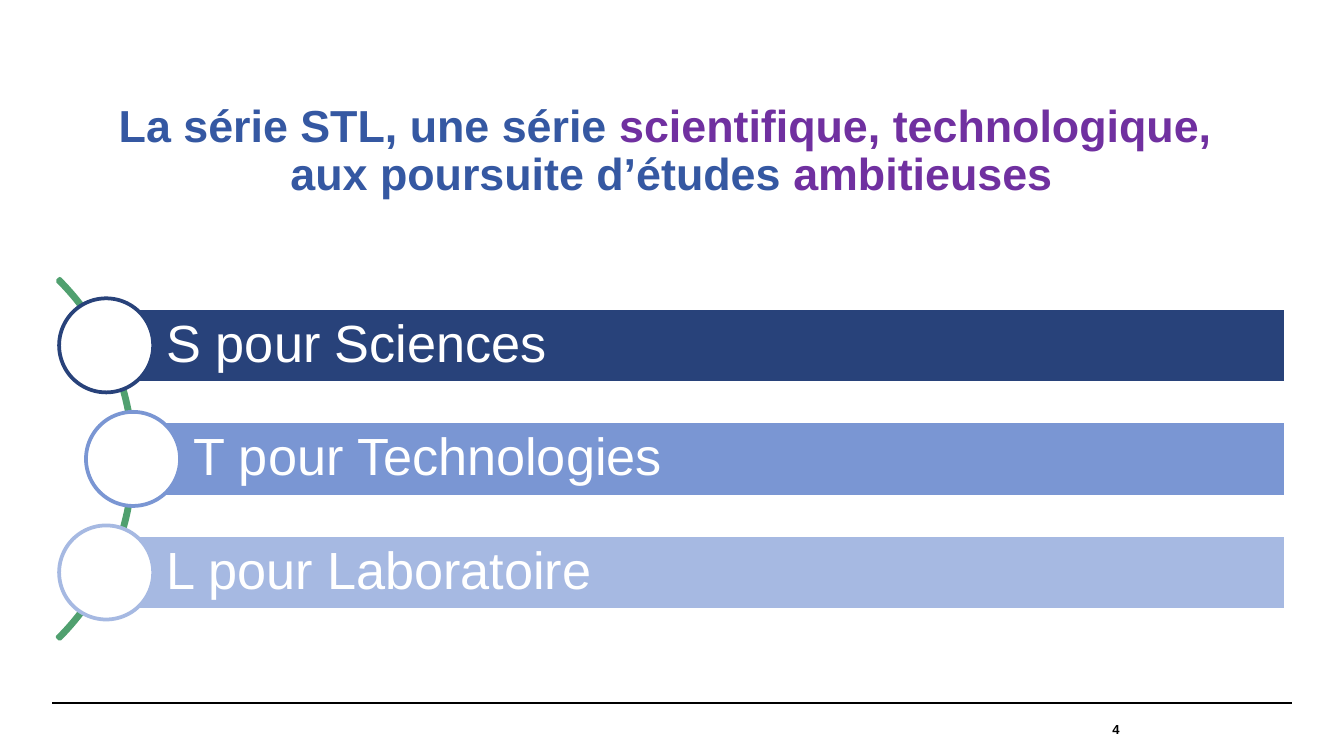
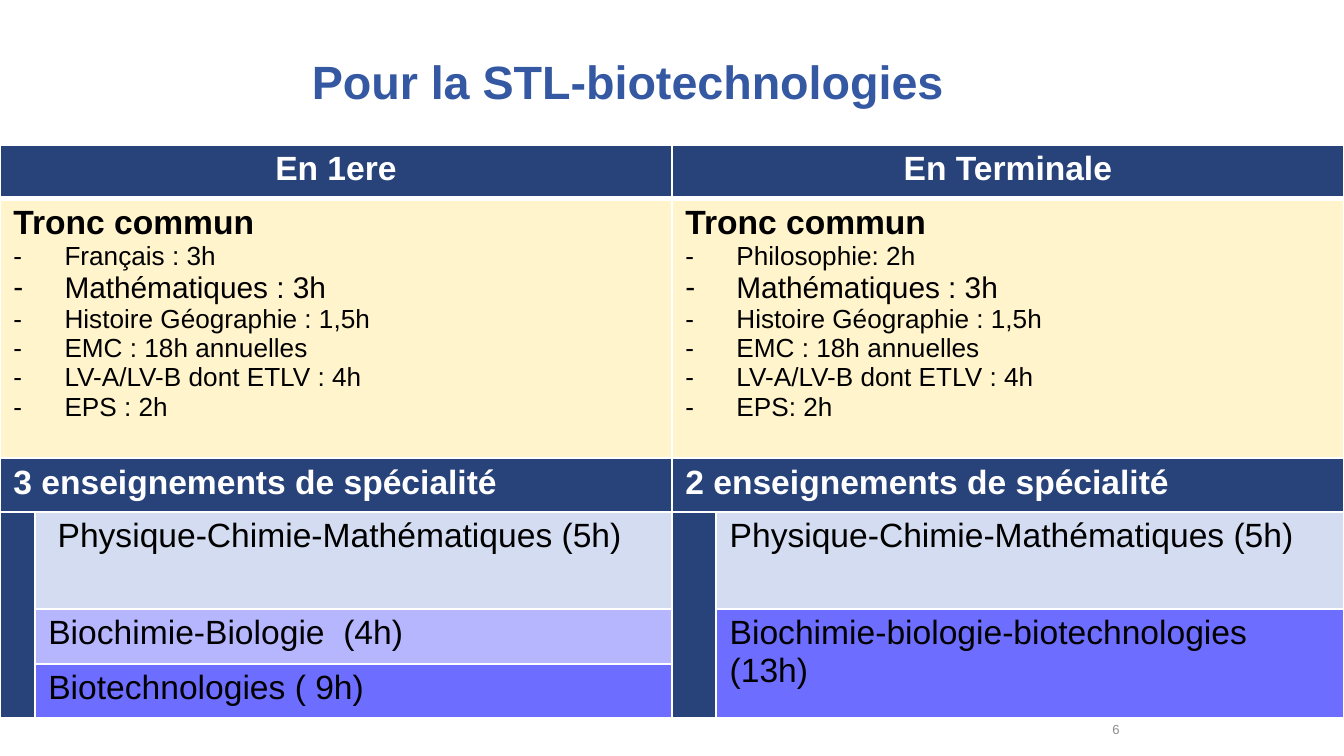
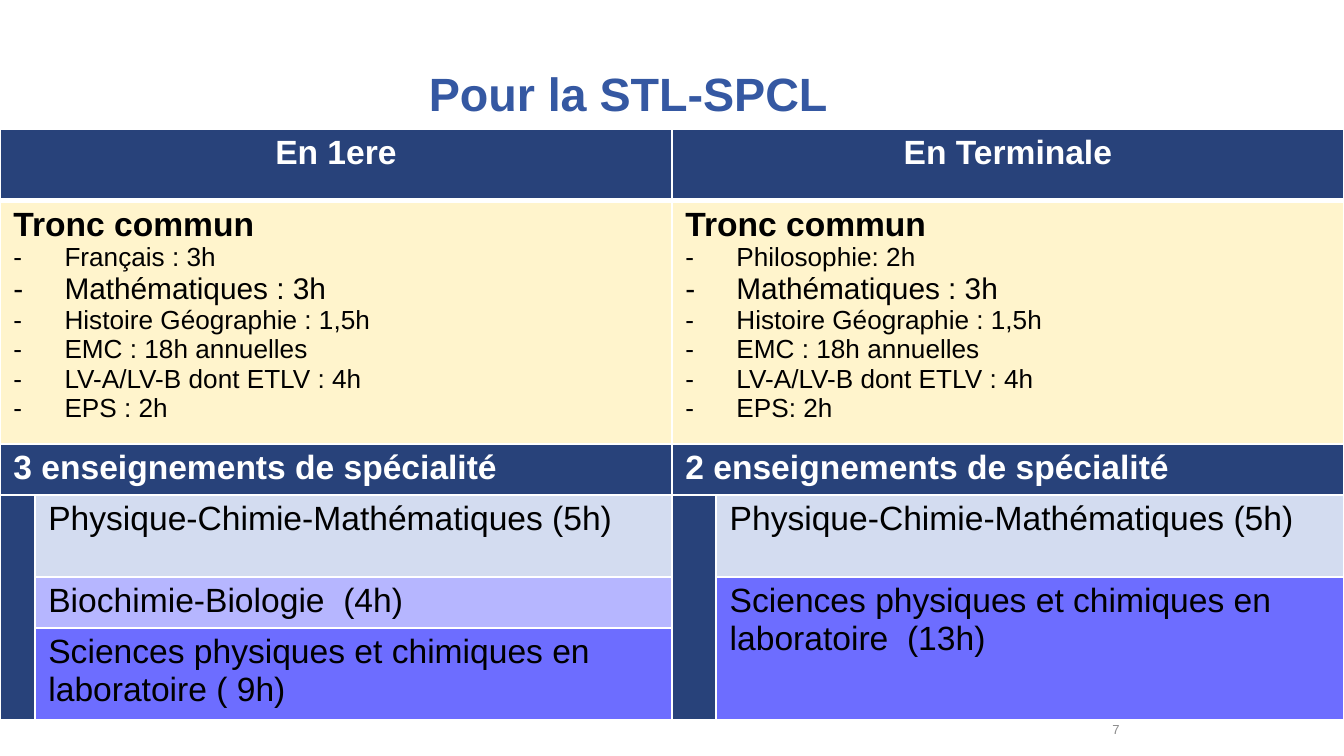
from lxml.etree import SubElement, Element
from pptx import Presentation
from pptx.dml.color import RGBColor
from pptx.enum.shapes import MSO_CONNECTOR as Connector, MSO_SHAPE as Shape
from pptx.enum.text import MSO_ANCHOR as Anchor, PP_ALIGN as Align
from pptx.oxml.ns import qn
from pptx.util import Inches, Pt

FONT = "Arial"
NAVY, BLUE, PURPLE, GREEN = "28427A", "3558A2", "7030A0", "50A06F"
WHITE, BLACK, GREY, CREAM = "FFFFFF", "000000", "8C8C8C", "FFF4CC"
PALE, LILAC, VIOLET = "D3DCF0", "B6B6FF", "6D6DFF"

SERIES_TITLE = [
    [("La série STL, une série ", BLUE), ("scientifique, technologique, ", PURPLE)],
    [("aux poursuite d’études ", BLUE), ("ambitieuses", PURPLE)],
]
LETTERS = [
    ("S pour Sciences", NAVY, 0),
    ("T pour Technologies", "7A96D3", 0.2),
    ("L pour Laboratoire", "A6B9E2", 0),
]

YEARS = ["En 1ere", "En Terminale"]
CORE_TITLE = "Tronc commun"
SHARED_CORE = [
    ("Mathématiques : 3h", 16),
    ("Histoire Géographie : 1,5h", 14),
    ("EMC : 18h annuelles", 14),
    ("LV-A/LV-B dont ETLV : 4h", 14),
]
CORES = [
    [("Français : 3h", 14), *SHARED_CORE, ("EPS : 2h", 14)],
    [("Philosophie: 2h", 14), *SHARED_CORE, ("EPS: 2h", 14)],
]
SPECIALTY_TITLES = ["3 enseignements de spécialité", "2 enseignements de spécialité"]
COLUMNS = [0.26, 4.74, 0.33, 4.67]
PROGRAMMES = [
    {
        "title": "Pour la STL-biotechnologies",
        "title_box": (2.32, 0.44, 4.97, 0.47),
        "number": "6",
        "top": 1.08,
        "rows": [0.4, 1.93, 0.4, 0.72, 0.41, 0.4],
        "first": [" Physique-Chimie-Mathématiques (5h)", "Biochimie-Biologie  (4h)",
                  "Biotechnologies ( 9h)"],
        "last": ["Physique-Chimie-Mathématiques (5h)",
                 "Biochimie-biologie-biotechnologies  (13h)"],
    },
    {
        "title": "Pour la STL-SPCL",
        "title_box": (3.19, 0.53, 3.35, 0.44),
        "number": "7",
        "top": 0.96,
        "rows": [0.53, 1.78, 0.37, 0.61, 0.38, 0.67],
        "first": ["Physique-Chimie-Mathématiques (5h)", "Biochimie-Biologie  (4h)",
                  "Sciences physiques et chimiques en laboratoire ( 9h)"],
        "last": ["Physique-Chimie-Mathématiques (5h)",
                 "Sciences physiques et chimiques en laboratoire  (13h)"],
    },
]


def color(value):
    return RGBColor.from_string(value)


def inches(*values):
    return [Inches(value) for value in values]


def add_span(para, text, size, ink, bold=False):
    span = para.add_run()
    span.text = text
    font = span.font
    font.name, font.size, font.bold = FONT, Pt(size), bold
    font.color.rgb = color(ink)


def set_insets(target, left, top, right, bottom):
    target.margin_left, target.margin_top, target.margin_right, target.margin_bottom = inches(
        left, top, right, bottom)


def add_box(page, place, align, anchor=Anchor.TOP):
    frame = page.shapes.add_textbox(*inches(*place)).text_frame
    frame.word_wrap = True
    frame.vertical_anchor = anchor
    set_insets(frame, 0, 0, 0, 0)
    para = frame.paragraphs[0]
    para.alignment = align
    return para


def add_title(page, place, lines, size, align):
    para = add_box(page, place, align)
    para.line_spacing = 0.9
    for index, line in enumerate(lines):
        if index:
            para.add_line_break()
        for text, ink in line:
            add_span(para, text, size, ink, True)


def add_number(page, number, ink, bold=False):
    para = add_box(page, (6.85, 5.23, 1.48, 0.39), Align.RIGHT, Anchor.MIDDLE)
    add_span(para, number, 7, ink, bold)


def new_page(deck):
    page = deck.slides.add_slide(deck.slide_layouts[6])
    rule = page.shapes.add_connector(Connector.STRAIGHT, *inches(0.39, 5.23, 9.61, 5.23))
    rule.line.color.rgb = color(BLACK)
    rule.line.width = Pt(0.8)
    SubElement(rule._element.spPr, qn("a:effectLst"))
    return page


def add_figure(page, kind, place, fill, line):
    figure = page.shapes.add_shape(kind, *inches(*place))
    figure.shadow.inherit = False
    if fill:
        figure.fill.solid()
        figure.fill.fore_color.rgb = color(fill)
    else:
        figure.fill.background()
    figure.line.color.rgb = color(line)
    figure.line.width = Pt(2)
    return figure


def add_letters(page):
    arc = add_figure(page, Shape.BLOCK_ARC, (-2.79, 1.52, 3.79, 3.79), None, GREEN)
    for index, value in enumerate((189, 27, 0.006)):
        arc.adjustments[index] = value
    for index, (text, ink, shift) in enumerate(LETTERS):
        left, top = 0.79 + shift, 2.29 + 0.845 * index
        band = add_figure(page, Shape.RECTANGLE, (left, top, 9.57 - left, 0.56), ink, WHITE)
        frame = band.text_frame
        frame.word_wrap = True
        frame.vertical_anchor = Anchor.MIDDLE
        set_insets(frame, 0.45, 0.08, 0.08, 0.08)
        para = frame.paragraphs[0]
        para.alignment = Align.LEFT
        para.line_spacing = 0.9
        add_span(para, text, 28, WHITE)
        add_figure(page, Shape.OVAL, (left - 0.35, top - 0.07, 0.7, 0.7), WHITE, ink)


def style_cell(cell, fill, widths):
    set_insets(cell, 0.1, 0.04, 0.1, 0.04)
    cell.fill.solid()
    cell.fill.fore_color.rgb = color(fill)
    properties = cell._tc.get_or_add_tcPr()
    for index, side in enumerate("LRTB"):
        border = Element(qn("a:ln" + side), w=str(Pt(widths.get(side, 1))))
        SubElement(SubElement(border, qn("a:solidFill")), qn("a:srgbClr"), val=WHITE)
        properties.insert(index, border)


def write_cell(cell, text, ink, bold=False, align=Align.LEFT):
    para = cell.text_frame.paragraphs[0]
    para.alignment = align
    add_span(para, text, 18, ink, bold)


def add_bullet(frame, text, size):
    para = frame.add_paragraph()
    properties = para._p.get_or_add_pPr()
    properties.set("marL", str(Inches(0.38)))
    properties.set("indent", str(-Inches(0.38)))
    SubElement(properties, qn("a:buFont"), typeface=FONT)
    SubElement(properties, qn("a:buChar"), char="-")
    add_span(para, text, size, BLACK)


def add_programme(page, programme):
    heights = programme["rows"]
    table = page.shapes.add_table(
        len(heights), len(COLUMNS), *inches(0, programme["top"], 10, sum(heights))).table
    table.first_row = table.horz_banding = False
    for column, width in zip(table.columns, COLUMNS):
        column.width = Inches(width)
    for row, height in zip(table.rows, heights):
        row.height = Inches(height)

    row_fills = [NAVY, CREAM, NAVY, PALE, LILAC, VIOLET]
    row_borders = {0: {"B": 3}, 1: {"T": 3}}
    for row, fill in enumerate(row_fills):
        for column in range(len(COLUMNS)):
            if row > 2 and column % 2 == 0:
                fill_here = NAVY
            else:
                fill_here = VIOLET if (row, column) == (4, 3) else fill
            style_cell(table.cell(row, column), fill_here, row_borders.get(row, {}))

    for year, subjects in enumerate((programme["first"], programme["last"])):
        left = 2 * year
        for row in range(3):
            table.cell(row, left).merge(table.cell(row, left + 1))
        table.cell(3, left).merge(table.cell(5, left))
        write_cell(table.cell(0, left), YEARS[year], WHITE, True, Align.CENTER)
        core = table.cell(1, left)
        write_cell(core, CORE_TITLE, BLACK, True)
        for text, size in CORES[year]:
            add_bullet(core.text_frame, text, size)
        write_cell(table.cell(2, left), SPECIALTY_TITLES[year], WHITE, True)
        for row, subject in enumerate(subjects, 3):
            write_cell(table.cell(row, left + 1), subject, BLACK)
    table.cell(4, 3).merge(table.cell(5, 3))


def main():
    deck = Presentation()
    deck.slide_width = Inches(10)
    deck.slide_height = deck.slide_width * 9 // 16

    page = new_page(deck)
    add_title(page, (0.39, 0.77, 9.21, 0.44), SERIES_TITLE, 24, Align.CENTER)
    add_letters(page)
    add_number(page, "4", BLACK, True)

    for programme in PROGRAMMES:
        page = new_page(deck)
        add_title(page, programme["title_box"], [[(programme["title"], BLUE)]], 25, Align.LEFT)
        add_programme(page, programme)
        add_number(page, programme["number"], GREY)

    deck.save("out.pptx")


if __name__ == "__main__":
    main()
